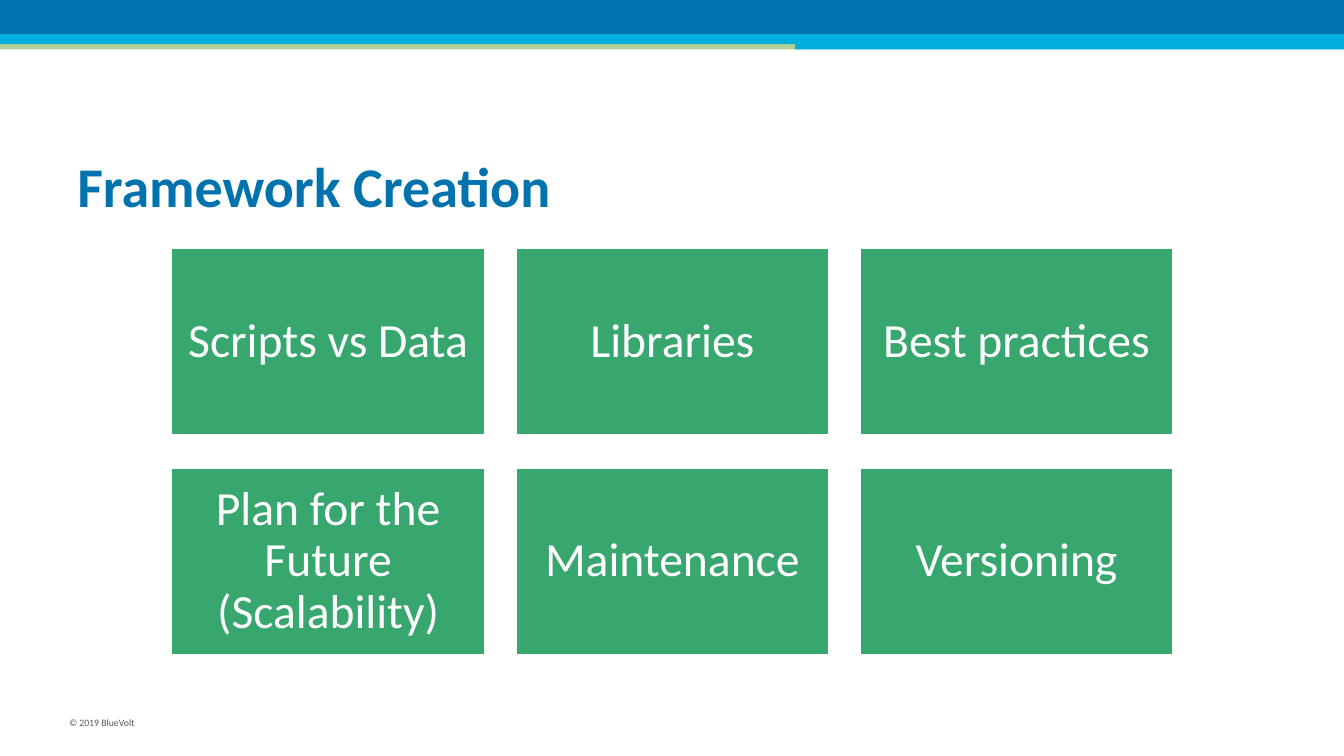
"""Build the Framework Creation slide: banner, title, six topic tiles and footer."""
from lxml.etree import SubElement
from pptx import Presentation
from pptx.dml.color import RGBColor
from pptx.enum.shapes import MSO_SHAPE
from pptx.enum.text import MSO_ANCHOR, PP_ALIGN
from pptx.oxml.ns import qn
from pptx.util import Inches, Pt

COLORS = {
    "blue": "0073AE",
    "cyan": "00AFDB",
    "lime": "63A537",
    "green": "37A76F",
    "white": "FFFFFF",
    "gray": "595959",
}
FONT = "Calibri"
TOPICS = [
    ["Scripts vs Data", "Libraries", "Best practices"],
    ["Plan for the Future (Scalability)", "Maintenance", "Versioning"],
]
TILE_LEFT, TILE_TOP = 12.75, 32.8
TILE_WIDTH, TILE_HEIGHT = 23.33, 24.8
COLUMN_STEP, ROW_STEP = 25.61, 29.07


def rgb(name):
    return RGBColor.from_string(COLORS[name])


class Deck:
    """Holds the style and current slide; boxes are in percent of the slide's size."""

    def __init__(self):
        self.prs = Presentation()
        self.prs.slide_width, self.prs.slide_height = Inches(13.33), Inches(7.5)
        self.slide = self.prs.slides.add_slide(self.prs.slide_layouts[5])

    def box(self, left, top, width, height):
        w, h = self.prs.slide_width / 100, self.prs.slide_height / 100
        return int(left * w), int(top * h), int(width * w), int(height * h)

    def set_text(self, tf, text, size, color, bold=False, align=PP_ALIGN.LEFT):
        tf.word_wrap = True
        p = tf.paragraphs[0]
        p.text = text
        p.alignment = align
        p.font.name, p.font.size, p.font.bold = FONT, Pt(size), bold
        p.font.color.rgb = rgb(color)
        return p

    def rect(self, box, color, opacity=100):
        sp = self.slide.shapes.add_shape(MSO_SHAPE.RECTANGLE, *self.box(*box))
        sp.shadow.inherit = False
        sp.fill.solid()
        sp.fill.fore_color.rgb = rgb(color)
        sp.line.fill.background()
        if opacity < 100:
            clr = sp._element.spPr.find(qn("a:solidFill"))[0]
            SubElement(clr, qn("a:alpha"), val=str(opacity * 1000))
        return sp

    def title(self, box, text):
        sp = self.slide.shapes.title
        sp.left, sp.top, sp.width, sp.height = self.box(*box)
        sp.text_frame.vertical_anchor = MSO_ANCHOR.MIDDLE
        self.set_text(sp.text_frame, text, 40, "blue", bold=True)

    def tile(self, col, row, text):
        left, top = TILE_LEFT + col * COLUMN_STEP, TILE_TOP + row * ROW_STEP
        sp = self.rect((left, top, TILE_WIDTH, TILE_HEIGHT), "green")
        sp.line.color.rgb = rgb("white")
        sp.line.width = Pt(1.5)
        tf = sp.text_frame
        tf.margin_left = tf.margin_right = Inches(0.14)
        tf.margin_top = tf.margin_bottom = Inches(0.14)
        tf.vertical_anchor = MSO_ANCHOR.MIDDLE
        p = self.set_text(tf, text, 34, "white", align=PP_ALIGN.CENTER)
        p.line_spacing = 0.9

    def footer(self, box, text):
        sp = self.slide.shapes.add_textbox(*self.box(*box))
        self.set_text(sp.text_frame, text, 7, "gray")


def main():
    deck = Deck()
    deck.rect((0, 5.33, 100, 1.2), "lime", opacity=50)
    deck.rect((0, 0, 100, 4.53), "blue")
    deck.rect((0, 4.53, 100, 1.33), "cyan")
    deck.rect((59.17, 5.2, 40.83, 1.33), "cyan")
    deck.footer((4.4, 94.13, 21.1, 2.93), "© 2019 BlueVolt")
    deck.title((5, 16.67, 90, 15.6), "Framework Creation")
    for row, topics in enumerate(TOPICS):
        for col, topic in enumerate(topics):
            deck.tile(col, row, topic)
    deck.prs.save("out.pptx")


if __name__ == "__main__":
    main()
